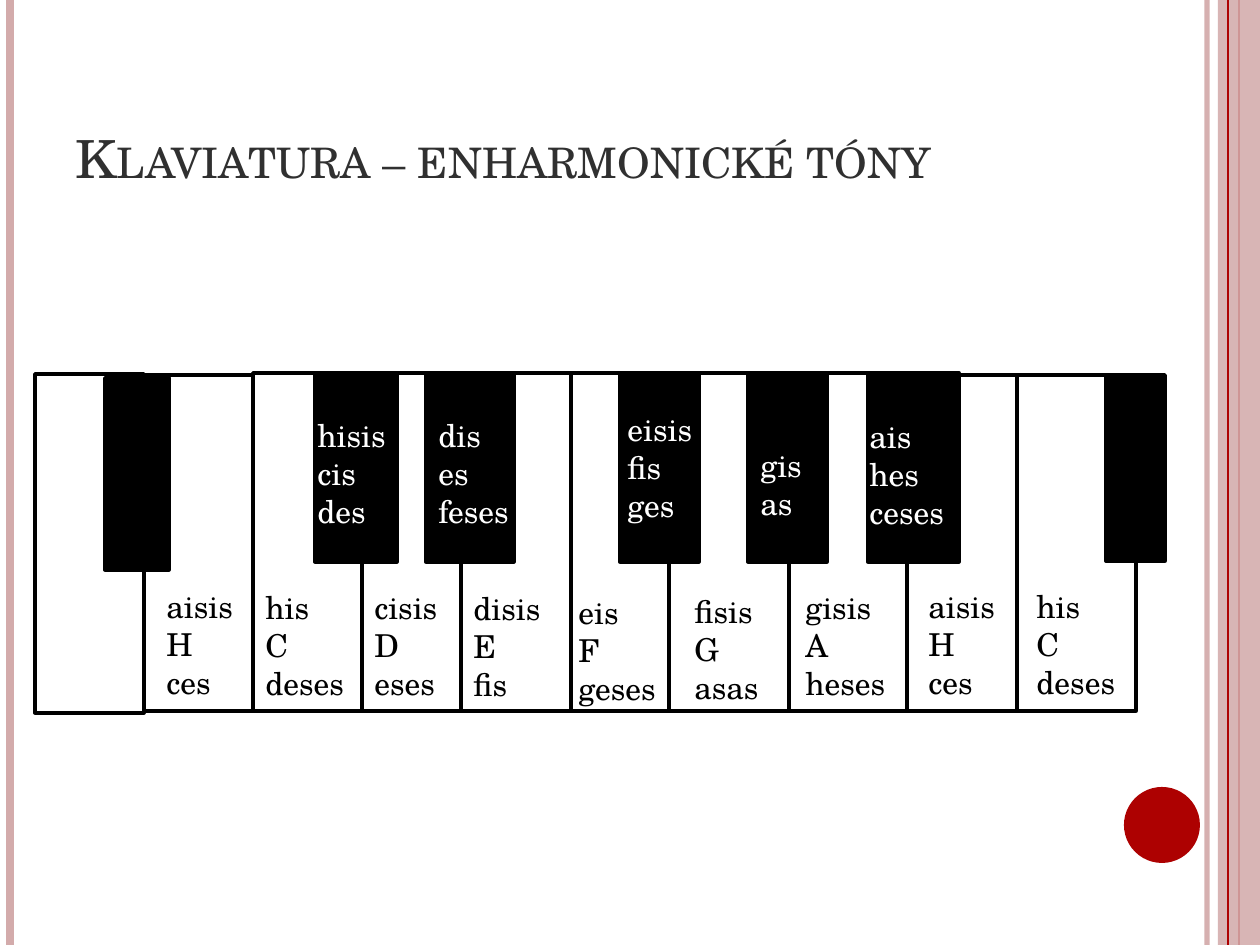
from dataclasses import dataclass
from itertools import pairwise

from lxml.etree import SubElement
from pptx import Presentation
from pptx.dml.color import RGBColor
from pptx.enum.shapes import MSO_CONNECTOR, MSO_SHAPE
from pptx.enum.text import MSO_ANCHOR
from pptx.oxml.ns import qn
from pptx.util import Emu, Pt


@dataclass(frozen=True)
class Theme:
    font: str = "TeX Gyre Schola"
    title_size: int = 30
    label_size: int = 18
    key_line: int = 2
    title: str = "303030"
    black: str = "000000"
    white: str = "FFFFFF"
    rose: str = "D3ABAB"
    red: str = "AD0101"


THEME = Theme()
SLIDE = (0, 0, 1260, 945)

# White keys share their edges; each has a top, a bottom and a label:
# (offset from the key's left edge, top, width, lines)
WHITE_EDGES = [0, 109, 218, 327, 426, 536, 634, 754, 872, 982, 1101]
WHITE_KEYS = [
    (1, 340, None),
    (2, 338, (10, 208, 92, "aisis\nH\nces")),
    (0, 338, (0, 209, 105, "his\nC\ndeses")),
    (0, 338, (0, 209, 89, "cisis\nD\neses")),
    (0, 338, (0, 210, 105, "disis\nE\nfis")),
    (0, 338, (-5, 214, 103, "eis\nF\ngeses")),
    (0, 338, (13, 213, 91, "fisis\nG\nasas")),
    (0, 338, (4, 209, 106, "gisis\nA\nheses")),
    (2, 338, (9, 208, 92, "aisis\nH\nces")),
    (2, 338, (7, 208, 105, "his\nC\ndeses")),
]
# Black keys: left, top, width, height, label
BLACK_KEYS = [
    (70, 5, 64, 192, None),
    (280, 0, 82, 189, (-10, 37, 94, "hisis\ncis\ndes")),
    (391, 0, 88, 189, (0, 37, 97, "dis\nes\nfeses")),
    (585, 0, 79, 189, (-5, 31, 91, "eisis\nfis\nges")),
    (713, 0, 79, 189, (0, 67, 67, "gis\nas")),
    (833, 0, 91, 189, (-11, 38, 101, "ais\nhes\nceses")),
    (1071, 2, 59, 186, None),
]


def px(length):
    return Emu(round(length * 914400 / 126))


def paint(fill, color, alpha=100):
    fill.solid()
    fill.fore_color.rgb = RGBColor.from_string(color)
    if alpha < 100:
        color_node = fill._xPr.find(qn("a:solidFill"))[0]
        SubElement(color_node, qn("a:alpha")).set("val", str(alpha * 1000))


def add_text(page, text, box, *, size, color, anchor=MSO_ANCHOR.TOP, small_caps=False):
    """Add one paragraph for each line of text."""
    frame = page.shapes.add_textbox(*map(px, box)).text_frame
    frame.word_wrap = True
    frame.margin_right = 0
    frame.vertical_anchor = anchor
    frame.text = text
    for para in frame.paragraphs:
        for span in para.runs:
            span.font.name = THEME.font
            span.font.size = Pt(size)
            span.font.color.rgb = RGBColor.from_string(color)
            if small_caps:
                span.font._element.set("cap", "small")


def add_block(page, kind, box, color, *, alpha=100, outline=None):
    block = page.shapes.add_shape(kind, *map(px, box))
    block.shadow.inherit = False
    paint(block.fill, color, alpha)
    if outline:
        paint(block.line.fill, outline)
        block.line.width = Pt(THEME.key_line)
    else:
        block.line.fill.background()


def add_stripe(page, x, box, color, width, alpha=100):
    """Add a vertical line as tall as the box."""
    left, top, _, height = box
    stripe = page.shapes.add_connector(
        MSO_CONNECTOR.STRAIGHT, px(left + x), px(top), px(left + x), px(top + height))
    paint(stripe.line.fill, color, alpha)
    stripe.line.width = Pt(width)
    SubElement(stripe._element.spPr, qn("a:effectLst"))


def add_frame(page, box):
    left, top, _, height = box
    add_stripe(page, 1207, box, THEME.rose, 3, alpha=93)
    add_stripe(page, 10, box, THEME.rose, 4.5)
    add_stripe(page, 1239, box, THEME.red, 1.5)
    add_block(page, MSO_SHAPE.RECTANGLE, (left + 1218, top, 42, height), THEME.rose, alpha=87)
    add_stripe(page, 1228, box, THEME.red, 0.75)
    add_block(page, MSO_SHAPE.OVAL, (left + 1124, top + 787, 76, 76), THEME.red)


def add_key(page, origin, key, label, fill, ink):
    """Add a key and its label, both measured from the keyboard's corner."""
    left, top = origin
    x, y, width, height = key
    add_block(page, MSO_SHAPE.RECTANGLE, (left + x, top + y, width, height),
              fill, outline=THEME.black)
    if label:
        offset, label_top, label_width, text = label
        label_height = 13 + 38 * len(text.split("\n"))
        add_text(page, text, (left + x + offset, top + label_top, label_width, label_height),
                 size=THEME.label_size, color=ink)


def add_keyboard(page, origin):
    for (start, end), (top, bottom, label) in zip(pairwise(WHITE_EDGES), WHITE_KEYS):
        add_key(page, origin, (start, top, end - start, bottom - top), label,
                THEME.white, THEME.black)
    for *key, label in BLACK_KEYS:
        add_key(page, origin, key, label, THEME.black, THEME.white)


def main():
    deck = Presentation()
    deck.slide_width, deck.slide_height = px(SLIDE[2]), px(SLIDE[3])
    page = deck.slides.add_slide(deck.slide_layouts[6])
    paint(page.background.fill, THEME.white)
    add_frame(page, SLIDE)
    add_text(page, "Klaviatura – enharmonické tóny", (63, 38, 1029, 157),
             size=THEME.title_size, color=THEME.title,
             anchor=MSO_ANCHOR.BOTTOM, small_caps=True)
    add_keyboard(page, (35, 373))
    deck.save("out.pptx")


if __name__ == "__main__":
    main()
